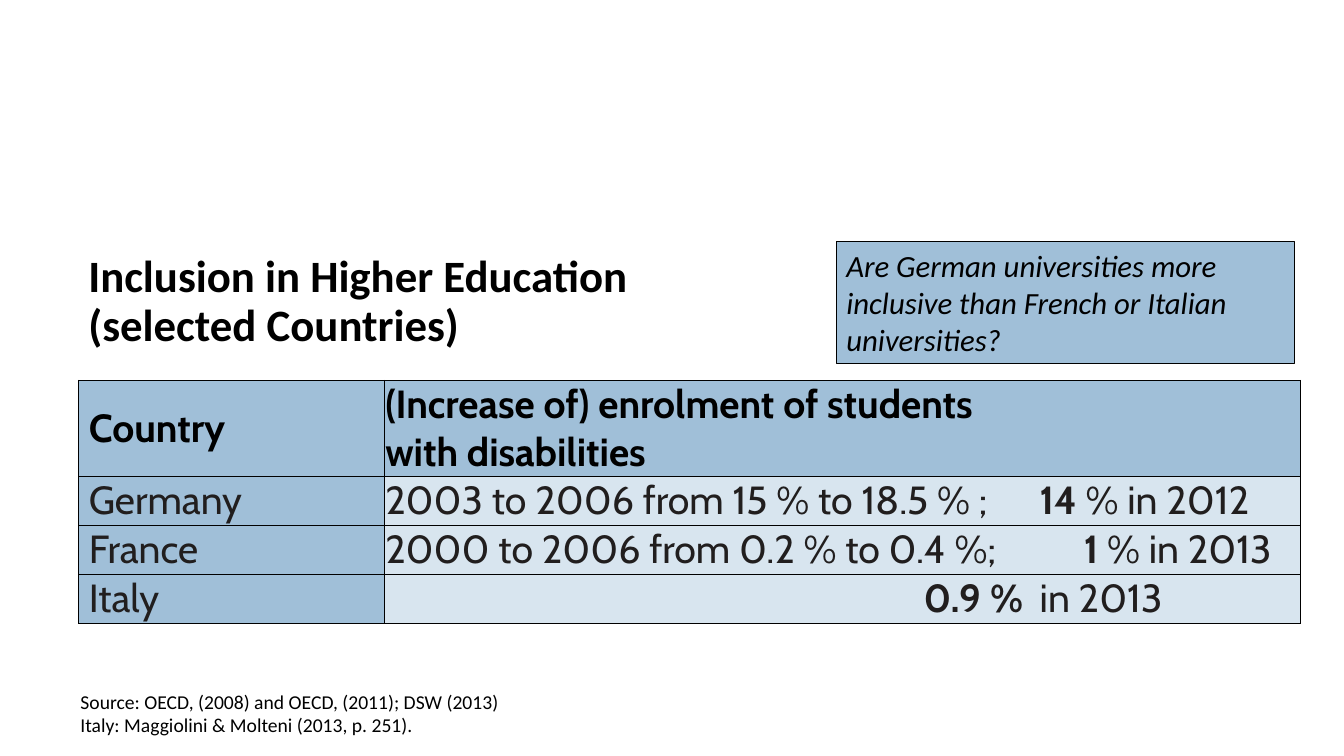
import pptx
import pptx.util
import pptx.dml.color
import pptx.enum.shapes
import pptx.enum.text
import pptx.oxml
import pptx.oxml.ns

Pt = pptx.util.Pt
ANCHOR = pptx.enum.text.MSO_ANCHOR
NS = pptx.oxml.ns.nsdecls("a")


def color(code):
    return pptx.dml.color.RGBColor.from_string(code)


class Deck:
    black = "000000"
    ink = "211E1E"
    blue = "A0BFD8"
    pale = "D8E5EF"
    sans = "Calibri"
    cabin = "Cabin"

    def __init__(self):
        self.file = pptx.Presentation()
        self.file.slide_width = Pt(960)
        self.file.slide_height = Pt(540)
        self.slide = self.file.slides.add_slide(self.file.slide_layouts[6])

    def put(self, para, text, size, face, shade, bold=False, slant=False):
        for i, line in enumerate(text.split("\n")):
            if i:
                para.add_line_break()
            run = para.add_run()
            run.text = line
            font = run.font
            font.size = Pt(size)
            font.name = face
            font.bold = bold
            font.italic = slant
            font.color.rgb = color(shade)

    def fill(self, frame, lines, size, bold=False, slant=False, space=1.0):
        frame.word_wrap = True
        frame.vertical_anchor = ANCHOR.TOP
        for i, line in enumerate(lines):
            para = frame.add_paragraph() if i else frame.paragraphs[0]
            para.alignment = pptx.enum.text.PP_ALIGN.LEFT
            para.line_spacing = space
            self.put(para, line, size, self.sans, self.black, bold, slant)

    def text(self, box, lines, size, **style):
        shape = self.slide.shapes.add_textbox(*map(Pt, box))
        self.fill(shape.text_frame, lines, size, **style)

    def panel(self, box, lines, size, **style):
        kind = pptx.enum.shapes.MSO_SHAPE.RECTANGLE
        shape = self.slide.shapes.add_shape(kind, *map(Pt, box))
        shape.shadow.inherit = False
        shape.fill.solid()
        shape.fill.fore_color.rgb = color(self.blue)
        shape.line.color.rgb = color(self.black)
        shape.line.width = Pt(0.75)
        self.fill(shape.text_frame, lines, size, **style)

    def border(self, cell):
        props = cell._tc.get_or_add_tcPr()
        for side in ("lnL", "lnR", "lnT", "lnB"):
            props.append(pptx.oxml.parse_xml(
                f'<a:{side} {NS} w="{Pt(0.5)}"><a:solidFill>'
                f'<a:srgbClr val="{self.black}"/></a:solidFill></a:{side}>'))

    def tabs(self, para, stops):
        marks = "".join(f'<a:tab pos="{Pt(s)}" algn="l"/>' for s in stops)
        para._p.get_or_add_pPr().append(
            pptx.oxml.parse_xml(f"<a:tabLst {NS}>{marks}</a:tabLst>"))

    def cell(self, cell, runs, head, label, stops):
        self.border(cell)
        cell.fill.solid()
        cell.fill.fore_color.rgb = color(self.blue if head or label else self.pale)
        cell.vertical_anchor = ANCHOR.MIDDLE
        cell.margin_left = Pt(7.5 if label else 0.7)
        cell.margin_right = cell.margin_top = Pt(0.7)
        cell.margin_bottom = Pt(0)
        para = cell.text_frame.paragraphs[0]
        if stops:
            self.tabs(para, stops)
        shade = self.black if head else self.ink
        for text, bold in runs:
            self.put(para, text, 28, self.cabin, shade, bold)

    def table(self, left, top, cols, highs, rows):
        frame = self.slide.shapes.add_table(
            len(rows), len(cols), Pt(left), Pt(top), Pt(sum(cols)), Pt(sum(highs)))
        grid = frame.table
        for c, wide in enumerate(cols):
            grid.columns[c].width = Pt(wide)
        for r, (name, runs, stops) in enumerate(rows):
            grid.rows[r].height = Pt(highs[r])
            head = r == 0
            self.cell(grid.cell(r, 0), [(name, head)], head, True, ())
            self.cell(grid.cell(r, 1), runs, head, False, stops)


def main():
    deck = Deck()
    deck.text((56, 178, 428, 88),
              ["Inclusion in Higher Education\n(selected Countries)"],
              32, bold=True, space=0.9)
    rows = [
        ("Country",
         [("(Increase of) enrolment of students\nwith disabilities", True)], ()),
        ("Germany",
         [("2003 to 2006 from 15 % to 18.5 % ;\t", False),
          ("14 ", True), ("% in 2012", False)], (467.5,)),
        ("France",
         [("2000 to 2006 from 0.2 % to 0.4 %;\t", False),
          ("1 ", True), ("% in 2013", False)], (499,)),
        ("Italy",
         [("\t", False), ("0.9 %\t", True), ("in 2013", False)], (384.5, 467.5)),
    ]
    deck.table(56, 271.5, (218.5, 654.5), (68.5, 35, 35, 35), rows)
    deck.text((50.4, 489, 354, 41),
              ["Source: OECD, (2008) and OECD, (2011); DSW (2013)",
               "Italy: Maggiolini & Molteni (2013, p. 251)."], 14)
    deck.panel((597.5, 172.5, 327, 87),
               ["Are German universities more inclusive than French or Italian universities?"],
               22, slant=True)
    deck.file.save("out.pptx")


if __name__ == "__main__":
    main()
